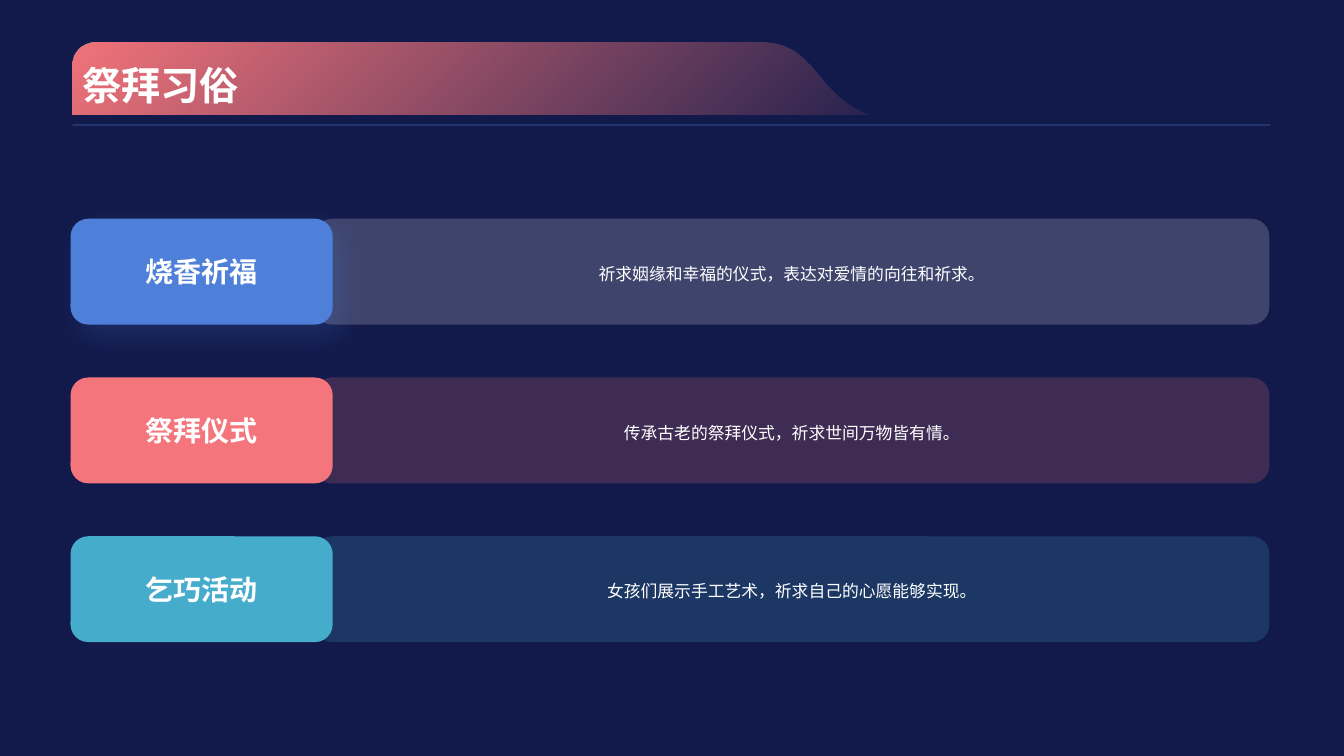
from lxml import etree
from pptx import Presentation, util as u
from pptx.dml.color import RGBColor
from pptx.enum import shapes, text
from pptx.oxml.ns import qn

THEME = {
    "font": "Arial", "night": "121A4B", "white": "FFFFFF", "mist": "F0F0F0",
    "blue": "4E80D9", "coral": "F4757B", "teal": "45ACCC",
    "title": 28, "label": 20, "body": 12,
}
WIDTH, HEIGHT = 13.33, 7.5
LEFT, RIGHT = 0.7, 12.59
ROW_TOP, ROW_PITCH, ROW_HEIGHT = 2.17, 1.575, 1.05
LABEL_WIDTH, PANEL_LEFT = 2.6, 3.12
BANNER_LEFT, BANNER_TOP, BANNER_BOTTOM = 0.72, 0.42, 1.14


def set_alpha(properties, percent):
    color = list(properties.iter(qn("a:srgbClr")))[-1]
    etree.SubElement(color, qn("a:alpha")).set("val", str(percent * 1000))


def write(shape, words, size, bold, align, anchor):
    frame = shape.text_frame
    frame.word_wrap = True
    frame.vertical_anchor = anchor
    para = frame.paragraphs[0]
    para.text = words
    para.alignment = align
    para.font.name = THEME["font"]
    para.font.size = u.Pt(size)
    para.font.bold = bold
    para.font.color.rgb = RGBColor.from_string(THEME["white"])
    return para


deck = Presentation()
deck.slide_width, deck.slide_height = u.Inches(WIDTH), u.Inches(HEIGHT)
page = deck.slides.add_slide(deck.slide_layouts[6])
page.background.fill.solid()
page.background.fill.fore_color.rgb = RGBColor.from_string(THEME["night"])

curves = [
    [(8.63, 1.14), (8.38, 1.07), (8.23, 0.89), (8.05, 0.67)],
    [(8.05, 0.67), (7.86, 0.46), (7.71, 0.42), (7.56, 0.42)],
    [(0.94, 0.42), (0.82, 0.42), (0.72, 0.52), (0.72, 0.65)],
]
steps = 16
outline = []
for curve in curves:
    for step in range(steps + 1):
        t = step / steps
        weights = [(1 - t) ** 3, 3 * t * (1 - t) ** 2, 3 * t * t * (1 - t), t ** 3]
        outline.append([u.Inches(sum(w * point[axis] for w, point in zip(weights, curve)))
                        for axis in (0, 1)])
builder = page.shapes.build_freeform(u.Inches(BANNER_LEFT), u.Inches(BANNER_BOTTOM), scale=1.0)
builder.add_line_segments(outline, close=True)
banner = builder.convert_to_shape()
banner.shadow.inherit = False
banner.line.fill.background()
banner.fill.gradient()
banner.fill.gradient_angle = 315
for stop, position in zip(banner.fill.gradient_stops, (0, 1)):
    stop.color.rgb = RGBColor.from_string(THEME["coral"])
    stop.position = position
set_alpha(banner.element.spPr, 10)

rule = page.shapes.add_connector(
    shapes.MSO_CONNECTOR.STRAIGHT,
    u.Inches(BANNER_LEFT), u.Inches(1.24), u.Inches(12.6), u.Inches(1.24))
rule.line.width = u.Pt(1)
rule.line.color.rgb = RGBColor.from_string(THEME["blue"])
set_alpha(rule.element.spPr, 40)
etree.SubElement(rule.element.spPr, qn("a:effectLst"))

customs = [
    ("烧香祈福", "祈求姻缘和幸福的仪式，表达对爱情的向往和祈求。", "blue", "mist"),
    ("祭拜仪式", "传承古老的祭拜仪式，祈求世间万物皆有情。", "coral", "coral"),
    ("乞巧活动", "女孩们展示手工艺术，祈求自己的心愿能够实现。", "teal", "teal"),
]
for row, (name, detail, label_color, panel_color) in enumerate(customs):
    top = ROW_TOP + row * ROW_PITCH
    cards = []
    for left, width, color in ((PANEL_LEFT, RIGHT - PANEL_LEFT, panel_color),
                               (LEFT, LABEL_WIDTH, label_color)):
        card = page.shapes.add_shape(
            shapes.MSO_SHAPE.ROUNDED_RECTANGLE,
            u.Inches(left), u.Inches(top), u.Inches(width), u.Inches(ROW_HEIGHT))
        card.shadow.inherit = False
        card.line.fill.background()
        card.fill.solid()
        card.fill.fore_color.rgb = RGBColor.from_string(THEME[color])
        cards.append(card)
    panel, label = cards
    set_alpha(panel.element.spPr, 20)
    panel.text_frame.margin_left = panel.text_frame.margin_right = u.Inches(0.2)
    body = write(panel, detail, THEME["body"], False, text.PP_ALIGN.CENTER, text.MSO_ANCHOR.MIDDLE)
    body.line_spacing = 1.2
    write(label, name, THEME["label"], True, text.PP_ALIGN.CENTER, text.MSO_ANCHOR.MIDDLE)
    if row == 0:
        effects = label.element.spPr.find(qn("a:effectLst"))
        glow = etree.SubElement(effects, qn("a:outerShdw"), blurRad=str(u.Pt(20)),
                                dist=str(u.Pt(10)), dir=str(45 * 60000),
                                algn="tl", rotWithShape="0")
        etree.SubElement(glow, qn("a:srgbClr"), val=THEME["blue"])
        set_alpha(glow, 20)

title = page.shapes.add_textbox(u.Inches(BANNER_LEFT), 0, u.Inches(11.88), u.Inches(1.12))
write(title, "祭拜习俗", THEME["title"], True, text.PP_ALIGN.LEFT, text.MSO_ANCHOR.BOTTOM)

deck.save("out.pptx")
